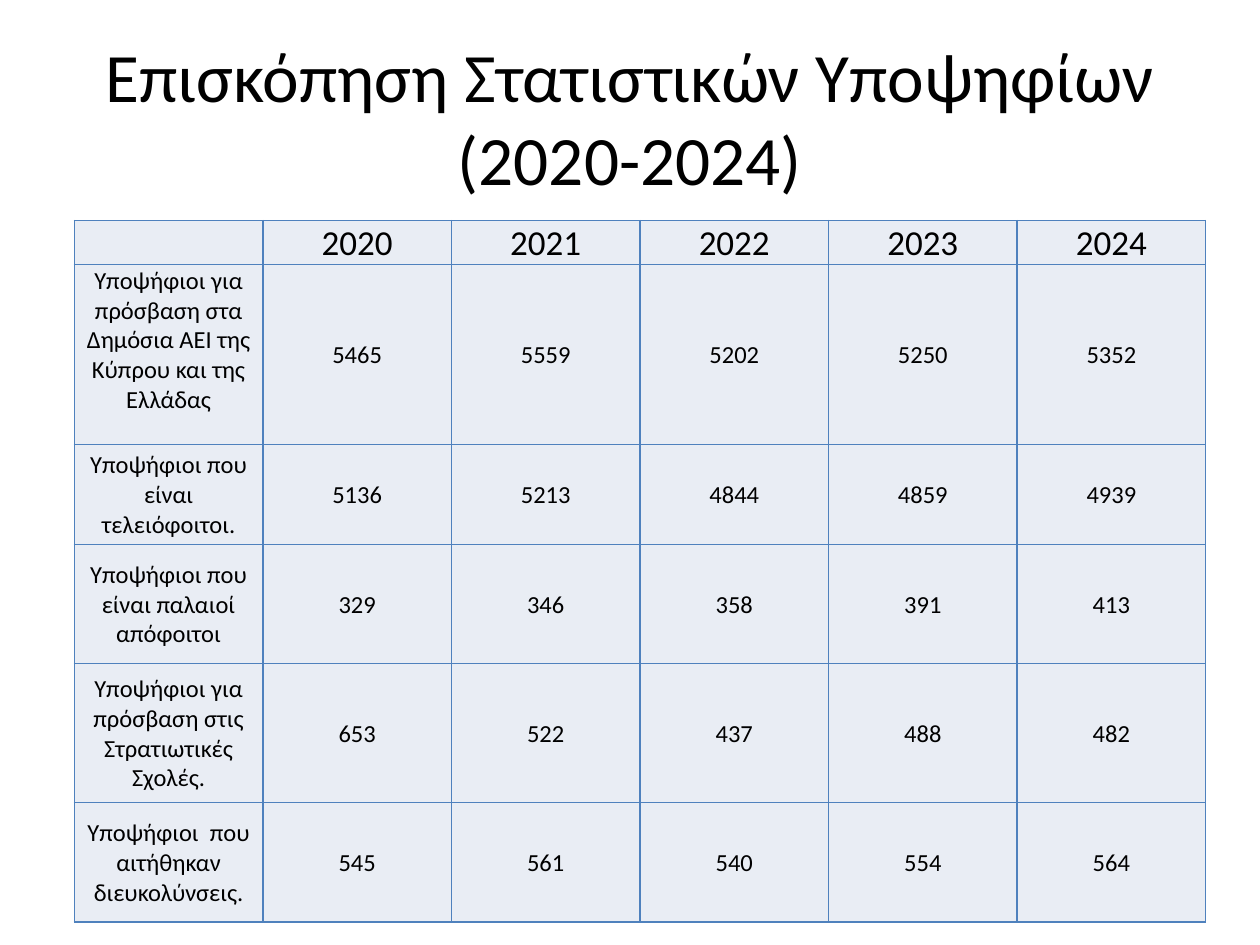
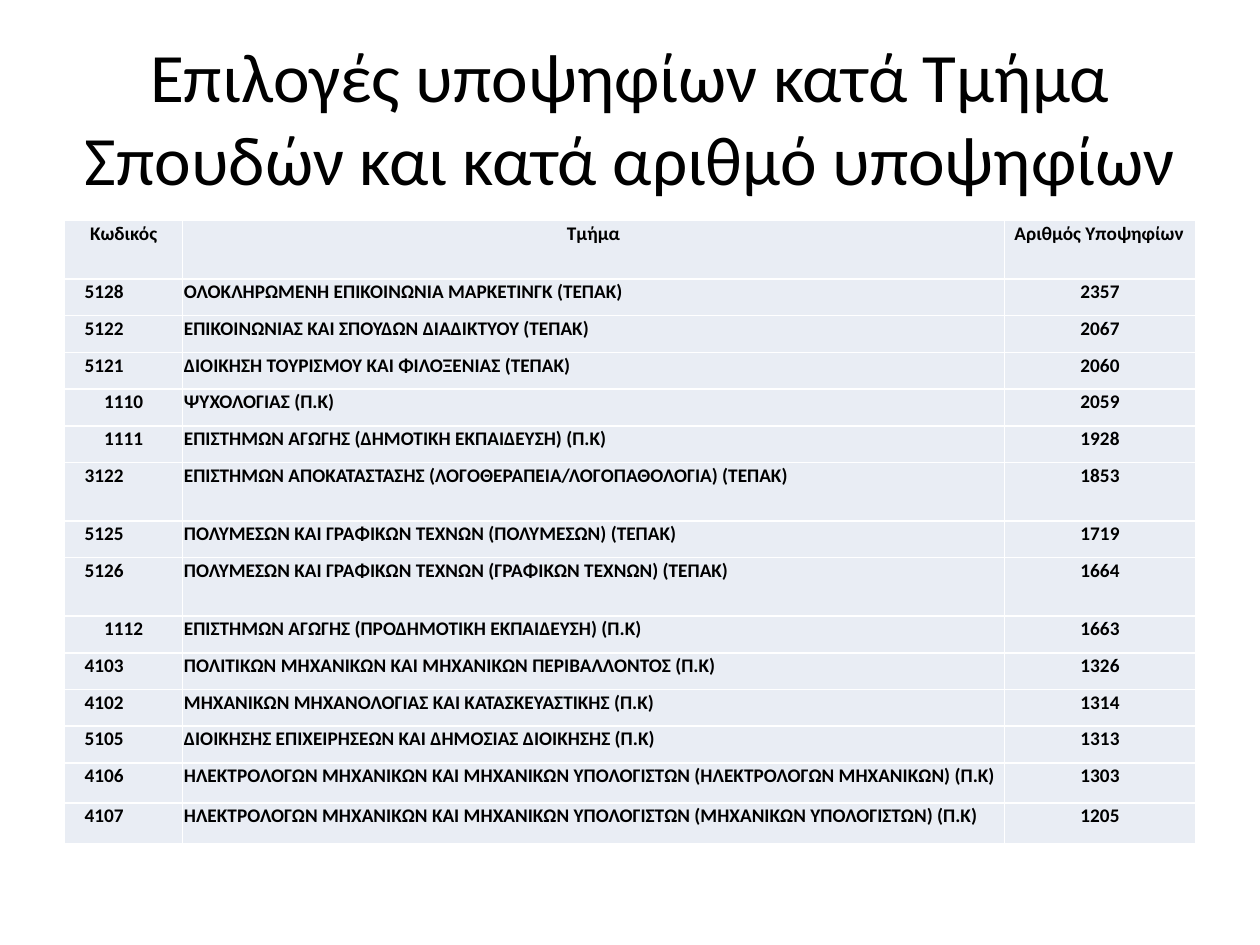
from dataclasses import dataclass

from lxml.etree import SubElement
from pptx import Presentation
from pptx.dml.color import RGBColor
from pptx.enum.text import MSO_ANCHOR, MSO_AUTO_SIZE, PP_ALIGN
from pptx.oxml import parse_xml
from pptx.oxml.ns import nsdecls, qn
from pptx.util import Pt


# Shared look
@dataclass(frozen=True)
class Theme:
    font: str = "Calibri"
    text: str = "000000"
    cell: str = "E9EDF4"
    blue_border: str = "4F81BD"
    white_border: str = "FFFFFF"
    title_size: float = 39.6
    year_size: float = 20
    figure_size: float = 14
    list_size: float = 11
    border_width: float = 1
    cell_margin: float = 0.72
    table_top: float = 126


THEME = Theme()

# Content: candidate statistics
YEARS = ["2020", "2021", "2022", "2023", "2024"]
STATISTICS = [
    ("Υποψήφιοι για πρόσβαση στα Δημόσια ΑΕΙ της Κύπρου και της Ελλάδας",
     [5465, 5559, 5202, 5250, 5352]),
    ("Υποψήφιοι που είναι τελειόφοιτοι.", [5136, 5213, 4844, 4859, 4939]),
    ("Υποψήφιοι που είναι παλαιοί απόφοιτοι", [329, 346, 358, 391, 413]),
    ("Υποψήφιοι για πρόσβαση στις Στρατιωτικές Σχολές.", [653, 522, 437, 488, 482]),
    ("Υποψήφιοι  που αιτήθηκαν διευκολύνσεις.", [545, 561, 540, 554, 564]),
]
STATISTICS_HEIGHTS = [25, 102.9, 57, 68.2, 79.4, 68.2]
FIRST_LABEL_SPACE = 17  # room kept free below the first row label

# Content: choices by department
DEPARTMENT_HEADINGS = ["Κωδικός", "Τμήμα", "Αριθμός Υποψηφίων"]
DEPARTMENTS = [
    ("5128", "ΟΛΟΚΛΗΡΩΜΕΝΗ ΕΠΙΚΟΙΝΩΝΙΑ ΜΑΡΚΕΤΙΝΓΚ (ΤΕΠΑΚ)", 2357),
    ("5122", "ΕΠΙΚΟΙΝΩΝΙΑΣ ΚΑΙ ΣΠΟΥΔΩΝ ΔΙΑΔΙΚΤΥΟΥ (ΤΕΠΑΚ)", 2067),
    ("5121", "ΔΙΟΙΚΗΣΗ ΤΟΥΡΙΣΜΟΥ ΚΑΙ ΦΙΛΟΞΕΝΙΑΣ (ΤΕΠΑΚ)", 2060),
    ("1110", "ΨΥΧΟΛΟΓΙΑΣ (Π.Κ)", 2059),
    ("1111", "ΕΠΙΣΤΗΜΩΝ ΑΓΩΓΗΣ (ΔΗΜΟΤΙΚΗ ΕΚΠΑΙΔΕΥΣΗ) (Π.Κ)", 1928),
    ("3122", "ΕΠΙΣΤΗΜΩΝ ΑΠΟΚΑΤΑΣΤΑΣΗΣ (ΛΟΓΟΘΕΡΑΠΕΙΑ/ΛΟΓΟΠΑΘΟΛΟΓΙΑ) (ΤΕΠΑΚ)", 1853),
    ("5125", "ΠΟΛΥΜΕΣΩΝ ΚΑΙ ΓΡΑΦΙΚΩΝ ΤΕΧΝΩΝ (ΠΟΛΥΜΕΣΩΝ) (ΤΕΠΑΚ)", 1719),
    ("5126", "ΠΟΛΥΜΕΣΩΝ ΚΑΙ ΓΡΑΦΙΚΩΝ ΤΕΧΝΩΝ (ΓΡΑΦΙΚΩΝ ΤΕΧΝΩΝ) (ΤΕΠΑΚ)", 1664),
    ("1112", "ΕΠΙΣΤΗΜΩΝ ΑΓΩΓΗΣ (ΠΡΟΔΗΜΟΤΙΚΗ ΕΚΠΑΙΔΕΥΣΗ) (Π.Κ)", 1663),
    ("4103", "ΠΟΛΙΤΙΚΩΝ ΜΗΧΑΝΙΚΩΝ ΚΑΙ ΜΗΧΑΝΙΚΩΝ ΠΕΡΙΒΑΛΛΟΝΤΟΣ (Π.Κ)", 1326),
    ("4102", "ΜΗΧΑΝΙΚΩΝ ΜΗΧΑΝΟΛΟΓΙΑΣ ΚΑΙ ΚΑΤΑΣΚΕΥΑΣΤΙΚΗΣ (Π.Κ)", 1314),
    ("5105", "ΔΙΟΙΚΗΣΗΣ ΕΠΙΧΕΙΡΗΣΕΩΝ ΚΑΙ ΔΗΜΟΣΙΑΣ ΔΙΟΙΚΗΣΗΣ (Π.Κ)", 1313),
    ("4106", "ΗΛΕΚΤΡΟΛΟΓΩΝ ΜΗΧΑΝΙΚΩΝ ΚΑΙ ΜΗΧΑΝΙΚΩΝ ΥΠΟΛΟΓΙΣΤΩΝ "
             "(ΗΛΕΚΤΡΟΛΟΓΩΝ ΜΗΧΑΝΙΚΩΝ) (Π.Κ)", 1303),
    ("4107", "ΗΛΕΚΤΡΟΛΟΓΩΝ ΜΗΧΑΝΙΚΩΝ ΚΑΙ ΜΗΧΑΝΙΚΩΝ ΥΠΟΛΟΓΙΣΤΩΝ "
             "(ΜΗΧΑΝΙΚΩΝ ΥΠΟΛΟΓΙΣΤΩΝ) (Π.Κ)", 1205),
]
TALL_ROWS, LAST_ROWS = (0, 6, 8), (13, 14)
CODE_INDENT, HEADING_INDENT = 11.5, 5.8


def add_run(paragraph, text, size, bold=False):
    run = paragraph.add_run()
    run.text = text
    run.font.name = THEME.font
    run.font.size = Pt(size)
    run.font.bold = bold
    run.font.color.rgb = RGBColor.from_string(THEME.text)


def add_titled_slide(presentation, title_lines):
    slide = presentation.slides.add_slide(presentation.slide_layouts[5])
    title = slide.shapes.title
    title.left, title.top, title.width, title.height = Pt(36), Pt(21.6), Pt(648), Pt(90)
    frame = title.text_frame
    frame.word_wrap = True
    frame.auto_size = MSO_AUTO_SIZE.NONE
    frame.vertical_anchor = MSO_ANCHOR.MIDDLE
    paragraph = frame.paragraphs[0]
    paragraph.alignment = PP_ALIGN.CENTER
    for index, line in enumerate(title_lines):
        if index:
            paragraph.add_line_break()
        add_run(paragraph, line, THEME.title_size)
    return slide


def set_borders(cell, color):
    properties = cell._tc.get_or_add_tcPr()
    for index, side in enumerate(("lnL", "lnR", "lnT", "lnB")):
        line = parse_xml(f'<a:{side} {nsdecls("a")} w="{Pt(THEME.border_width)}"/>')
        fill = SubElement(line, qn("a:solidFill"))
        SubElement(fill, qn("a:srgbClr")).set("val", color)
        properties.insert(index, line)


def add_plain_table(slide, left, widths, heights, border):
    """Add a table whose cells share one fill, border and set of margins."""
    table = slide.shapes.add_table(
        len(heights), len(widths), Pt(left), Pt(THEME.table_top),
        Pt(sum(widths)), Pt(sum(heights))).table
    table.first_row = table.horz_banding = False
    for column, width in zip(table.columns, widths):
        column.width = Pt(width)
    for row, height in zip(table.rows, heights):
        row.height = Pt(height)
    for cell in table.iter_cells():
        cell.margin_left = cell.margin_right = cell.margin_top = Pt(THEME.cell_margin)
        cell.margin_bottom = Pt(0)
        cell.fill.solid()
        cell.fill.fore_color.rgb = RGBColor.from_string(THEME.cell)
        set_borders(cell, border)
    return table


def fill_cell(cell, text, size, bold=False, anchor=MSO_ANCHOR.TOP, indent=None,
              alignment=PP_ALIGN.CENTER):
    """Write a cell; an indent makes it left-aligned."""
    cell.vertical_anchor = anchor
    if indent is not None:
        cell.margin_left = Pt(indent)
        alignment = PP_ALIGN.LEFT
    paragraph = cell.text_frame.paragraphs[0]
    paragraph.alignment = alignment
    add_run(paragraph, str(text), size, bold)


def build_statistics(presentation):
    slide = add_titled_slide(presentation, ["Επισκόπηση Στατιστικών Υποψηφίων (2020-2024)"])
    widths = [107.75] * (len(YEARS) + 1)
    table = add_plain_table(slide, 42.5, widths, STATISTICS_HEIGHTS, THEME.blue_border)
    for column, year in enumerate(YEARS, 1):
        fill_cell(table.cell(0, column), year, THEME.year_size, anchor=MSO_ANCHOR.MIDDLE)
    for row, (label, figures) in enumerate(STATISTICS, 1):
        for column, text in enumerate([label, *figures]):
            fill_cell(table.cell(row, column), text, THEME.figure_size,
                      anchor=MSO_ANCHOR.MIDDLE)
    table.cell(1, 0).margin_bottom = Pt(FIRST_LABEL_SPACE)


def build_departments(presentation):
    slide = add_titled_slide(presentation, ["Επιλογές υποψηφίων κατά Τμήμα",
                                            "Σπουδών και κατά αριθμό υποψηφίων"])
    heights = [33.4 if row in TALL_ROWS else 23 if row in LAST_ROWS else 21
               for row in range(len(DEPARTMENTS) + 1)]
    table = add_plain_table(slide, 36.9, [67.5, 469.5, 109.5], heights, THEME.white_border)
    for column, heading in enumerate(DEPARTMENT_HEADINGS):
        indent = HEADING_INDENT if column == 2 else None
        fill_cell(table.cell(0, column), heading, THEME.list_size, True, indent=indent)
    for row, entry in enumerate(DEPARTMENTS, 1):
        # Codes that start with 1 are centred, the others indented
        code_indent = None if entry[0].startswith("1") else CODE_INDENT
        indents = [code_indent, THEME.cell_margin, None]
        for column, (text, indent) in enumerate(zip(entry, indents)):
            fill_cell(table.cell(row, column), text, THEME.list_size, True, indent=indent)


def main():
    presentation = Presentation()
    presentation.slide_width, presentation.slide_height = Pt(720), Pt(540)
    build_statistics(presentation)
    build_departments(presentation)
    presentation.save("out.pptx")


if __name__ == "__main__":
    main()
